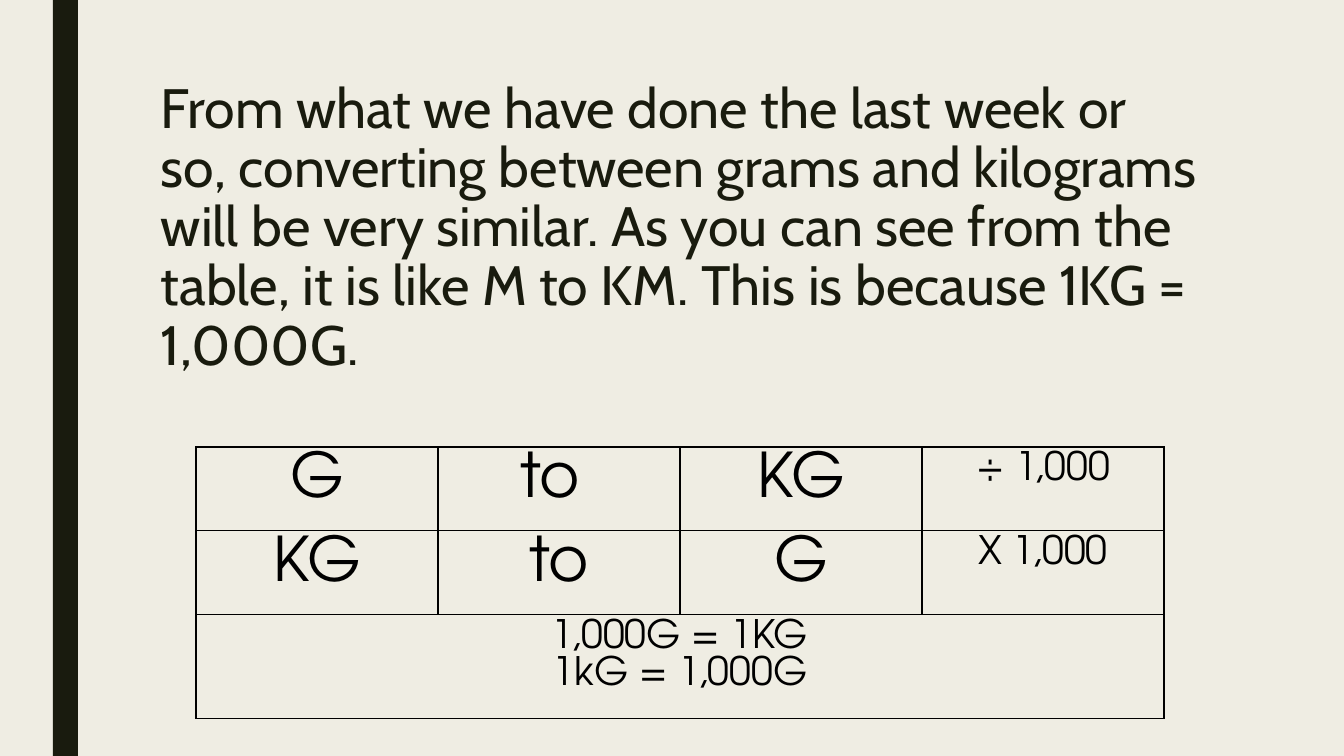
from dataclasses import dataclass

from lxml.etree import SubElement
from pptx import Presentation
from pptx.dml.color import RGBColor
from pptx.enum.shapes import MSO_SHAPE
from pptx.enum.text import MSO_ANCHOR, PP_ALIGN
from pptx.oxml.ns import qn
from pptx.slide import Slide
from pptx.table import _Cell
from pptx.text.text import TextFrame
from pptx.util import Emu, Pt


@dataclass(frozen=True)
class Theme:
    paper: str = "EFEDE3"
    dark: str = "191B0E"
    black: str = "000000"
    title_font: str = "Cabin"
    table_font: str = "TeX Gyre Adventor"
    title_size: float = 39.6
    unit_size: float = 44
    sum_size: float = 28
    border_width: float = 1


@dataclass(frozen=True)
class Box:
    left: int
    top: int
    width: int
    height: int

    def emu(self) -> tuple[Emu, Emu, Emu, Emu]:
        return px(self.left), px(self.top), px(self.width), px(self.height)


@dataclass(frozen=True)
class Conversion:
    source: str
    link: str
    target: str
    operation: str


THEME = Theme()
PAGE = Box(0, 0, 1344, 756)
SIDE_BAR = Box(53, 0, 25, 756)
TITLE = Box(151, 76, 1058, 300)
TABLE = Box(196, 447, 968, 218)
ROW_HEIGHTS = (68, 67, 83)
COLUMNS = 4
INSET_X, INSET_Y = 10, 5

TITLE_TEXT = (
    "From what we have done the last week or so, converting between grams and "
    "kilograms will be very similar. As you can see from the table, it is like "
    "M to KM. This is because 1KG = 1,000G."
)
CONVERSIONS = (
    Conversion("G", "to ", "KG", "÷ 1,000"),
    Conversion("KG", "to", "G", "X 1,000"),
)
EQUALITIES = "1,000G = 1KG\n1kG = 1,000G"


def px(length: int) -> Emu:
    return Emu(round(length * 914400 / 100.8))


def colour(value: str) -> RGBColor:
    return RGBColor.from_string(value)


def write(frame: TextFrame, text: str, *, font: str, size: float, ink: str,
          align: PP_ALIGN = PP_ALIGN.LEFT, spacing: float | None = None) -> None:
    """Fill a frame with one paragraph for each line of text."""
    frame.word_wrap = True
    for index, line in enumerate(text.split("\n")):
        para = frame.add_paragraph() if index else frame.paragraphs[0]
        para.alignment = align
        para.line_spacing = spacing
        span = para.add_run()
        span.text = line
        span.font.name = font
        span.font.size = Pt(size)
        span.font.color.rgb = colour(ink)


def add_borders(cell: _Cell) -> None:
    properties = cell._tc.get_or_add_tcPr()
    for side in ("a:lnL", "a:lnR", "a:lnT", "a:lnB"):
        line = SubElement(properties, qn(side), w=str(Pt(THEME.border_width)))
        fill = SubElement(line, qn("a:solidFill"))
        SubElement(fill, qn("a:srgbClr"), val=THEME.black)


def add_side_bar(page: Slide) -> None:
    bar = page.shapes.add_shape(MSO_SHAPE.RECTANGLE, *SIDE_BAR.emu())
    bar.shadow.inherit = False
    bar.fill.solid()
    bar.fill.fore_color.rgb = colour(THEME.dark)
    bar.line.fill.background()


def add_title(page: Slide) -> None:
    frame = page.shapes.add_textbox(*TITLE.emu()).text_frame
    frame.vertical_anchor = MSO_ANCHOR.TOP
    frame.margin_left = frame.margin_right = px(INSET_X)
    frame.margin_top = frame.margin_bottom = px(INSET_Y)
    write(frame, TITLE_TEXT, font=THEME.title_font, size=THEME.title_size,
          ink=THEME.dark, spacing=0.89)


def write_cell(cell: _Cell, text: str, size: float) -> None:
    write(cell.text_frame, text, font=THEME.table_font, size=size,
          ink=THEME.black, align=PP_ALIGN.CENTER)


def add_conversion_table(page: Slide) -> None:
    table = page.shapes.add_table(len(ROW_HEIGHTS), COLUMNS, *TABLE.emu()).table
    table.first_row = table.horz_banding = False
    for column in table.columns:
        column.width = px(TABLE.width // COLUMNS)
    for row, height in zip(table.rows, ROW_HEIGHTS):
        row.height = px(height)
    for cell in table.iter_cells():
        cell.margin_left = cell.margin_right = px(INSET_X)
        cell.margin_top = cell.margin_bottom = px(INSET_Y)
        add_borders(cell)
        cell.fill.background()

    for row, conversion in enumerate(CONVERSIONS):
        units = (conversion.source, conversion.link, conversion.target)
        for column, unit in enumerate(units):
            write_cell(table.cell(row, column), unit, THEME.unit_size)
        write_cell(table.cell(row, COLUMNS - 1), conversion.operation, THEME.sum_size)

    last = len(CONVERSIONS)
    table.cell(last, 0).merge(table.cell(last, COLUMNS - 1))
    write_cell(table.cell(last, 0), EQUALITIES, THEME.sum_size)


def main() -> None:
    deck = Presentation()
    deck.slide_width, deck.slide_height = px(PAGE.width), px(PAGE.height)
    page = deck.slides.add_slide(deck.slide_layouts[6])
    page.background.fill.solid()
    page.background.fill.fore_color.rgb = colour(THEME.paper)
    add_side_bar(page)
    add_title(page)
    add_conversion_table(page)
    deck.save("out.pptx")


if __name__ == "__main__":
    main()
